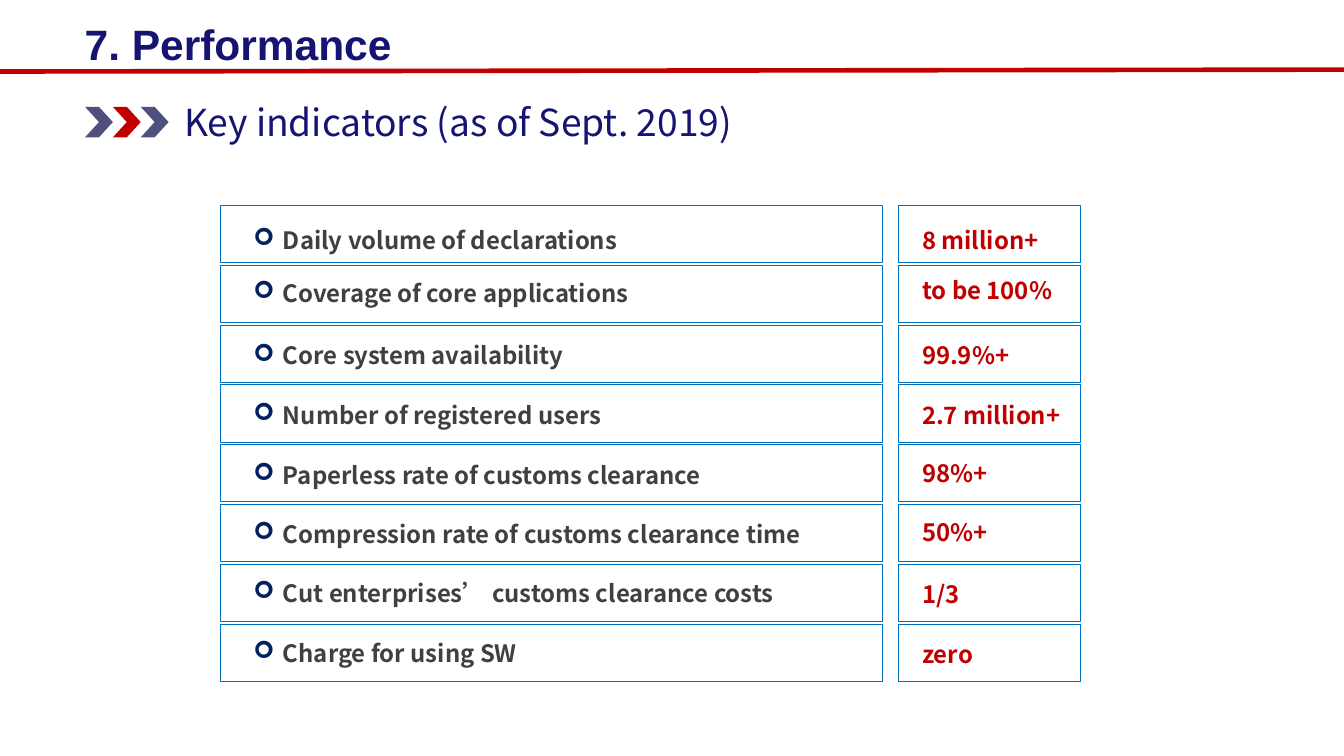
import pptx
import pptx.util
import pptx.dml.color
import pptx.enum.shapes
import pptx.oxml
import pptx.oxml.ns

Cm = pptx.util.Cm
Pt = pptx.util.Pt
SHAPE = pptx.enum.shapes.MSO_SHAPE
LINK = pptx.enum.shapes.MSO_CONNECTOR
qn = pptx.oxml.ns.qn

INK = {
    "navy": "151472", "slate": "50507F", "red": "C00000", "blue": "0070C0",
    "gray": "404040", "mark": "002060", "white": "FFFFFF",
}
SANS = "Noto Sans CJK SC"

# Label, value, and how far each sits below the top of its row (cm)
ROWS = [
    ("Daily volume of declarations", "8 million+", 0.18, 0.18),
    ("Coverage of core applications", "to be 100%", 0.23, 0.15),
    ("Core system availability", "99.9%+", 0.3, 0.28),
    ("Number of registered users", "2.7 million+", 0.28, 0.28),
    ("Paperless rate of customs clearance", "98%+", 0.3, 0.25),
    ("Compression rate of customs clearance time", "50%+", 0.28, 0.23),
    ("Cut enterprises’ customs clearance costs", "1/3", 0.25, 0.28),
    ("Charge for using SW", "zero", 0.25, 0.28),
]


def rgb(name):
    return pptx.dml.color.RGBColor.from_string(INK[name])


def add_mark(para):
    """Give a paragraph an arrow bullet with a hanging indent."""
    props = para._p.get_or_add_pPr()
    props.set("marL", str(Cm(0.79)))
    props.set("indent", str(-Cm(0.79)))
    color = pptx.oxml.ns.nsdecls("a")
    for tag in (
        f'<a:buClr {color}><a:srgbClr val="{INK["mark"]}"/></a:buClr>',
        f'<a:buFont {color} typeface="Wingdings"/>',
        f'<a:buChar {color} char="➢"/>',
    ):
        props.append(pptx.oxml.parse_xml(tag))


def add_text(slide, text, x, y, w, h, size=18, color="gray", font=SANS,
             bold=True, lead=None, mark=False):
    frame = slide.shapes.add_textbox(Cm(x), Cm(y), Cm(w), Cm(h)).text_frame
    frame.word_wrap = True
    para = frame.paragraphs[0]
    if mark:
        add_mark(para)
    if lead:
        para.line_spacing = lead
    run = para.add_run()
    run.text = text
    run.font.size = Pt(size)
    run.font.bold = bold
    run.font.name = font
    run.font.color.rgb = rgb(color)
    east = run._r.get_or_add_rPr().makeelement(qn("a:ea"), {"typeface": font})
    run._r.rPr.find(qn("a:latin")).addnext(east)


def add_form(slide, kind, x, y, w, h, fill, line=None):
    form = slide.shapes.add_shape(kind, Cm(x), Cm(y), Cm(w), Cm(h))
    form.shadow.inherit = False
    form.fill.solid()
    form.fill.fore_color.rgb = rgb(fill)
    if line:
        form.line.color.rgb = rgb(line)
        form.line.width = Pt(0.75)
    else:
        form.line.fill.background()


def add_head(slide, x, y, w, h):
    """Slide title over a red rule that spans the given box."""
    add_text(slide, "7. Performance", x + 2, y + 0.36, 11.66, 1.42,
             size=32, color="navy", font="Arial")
    rule = slide.shapes.add_connector(
        LINK.STRAIGHT, Cm(x), Cm(y + h), Cm(x + w), Cm(y + h - 0.05))
    rule.line.color.rgb = rgb("red")
    rule.line.width = Pt(3.5)
    props = rule._element.spPr
    props.append(props.makeelement(qn("a:effectLst"), {}))


def add_topic(slide, x, y, w, h):
    """Three chevrons followed by the subtitle."""
    step = 0.74
    for i, color in enumerate(("slate", "red", "slate")):
        add_form(slide, SHAPE.CHEVRON, x + i * step, y + 0.33, step, 0.81, color)
    add_text(slide, "Key indicators (as of Sept. 2019)", x + 2.38, y,
             w - 2.38, h, size=28, color="navy", bold=False)


def add_grid(slide, x, y, w, h):
    """Two columns of framed rows: indicator and value."""
    pitch, tall, side = 1.59, h - 1.59 * (len(ROWS) - 1), 4.83
    wide = w - side - 0.41
    right = x + w - side
    for i, (label, value, drop, dip) in enumerate(ROWS):
        top = y + i * pitch
        lead = 1.3 if i == 0 else None
        add_form(slide, SHAPE.RECTANGLE, x, top, wide, tall, "white", "blue")
        add_form(slide, SHAPE.RECTANGLE, right, top, side, tall, "white", "blue")
        add_text(slide, label, x + 0.61, top + drop, wide - 0.8, 1.02,
                 lead=lead, mark=True)
        add_text(slide, value, right + 0.38, top + dip, side - 0.38, 1.02,
                 color="red", lead=lead)


def main():
    deck = pptx.Presentation()
    deck.slide_width, deck.slide_height = Cm(35.71), Cm(20.09)
    slide = deck.slides.add_slide(deck.slide_layouts[6])
    add_head(slide, 0, 0, 35.71, 1.9)
    add_topic(slide, 2.26, 2.51, 30.53, 1.45)
    add_grid(slide, 5.87, 5.46, 22.83, 12.65)
    deck.save("out.pptx")


if __name__ == "__main__":
    main()
